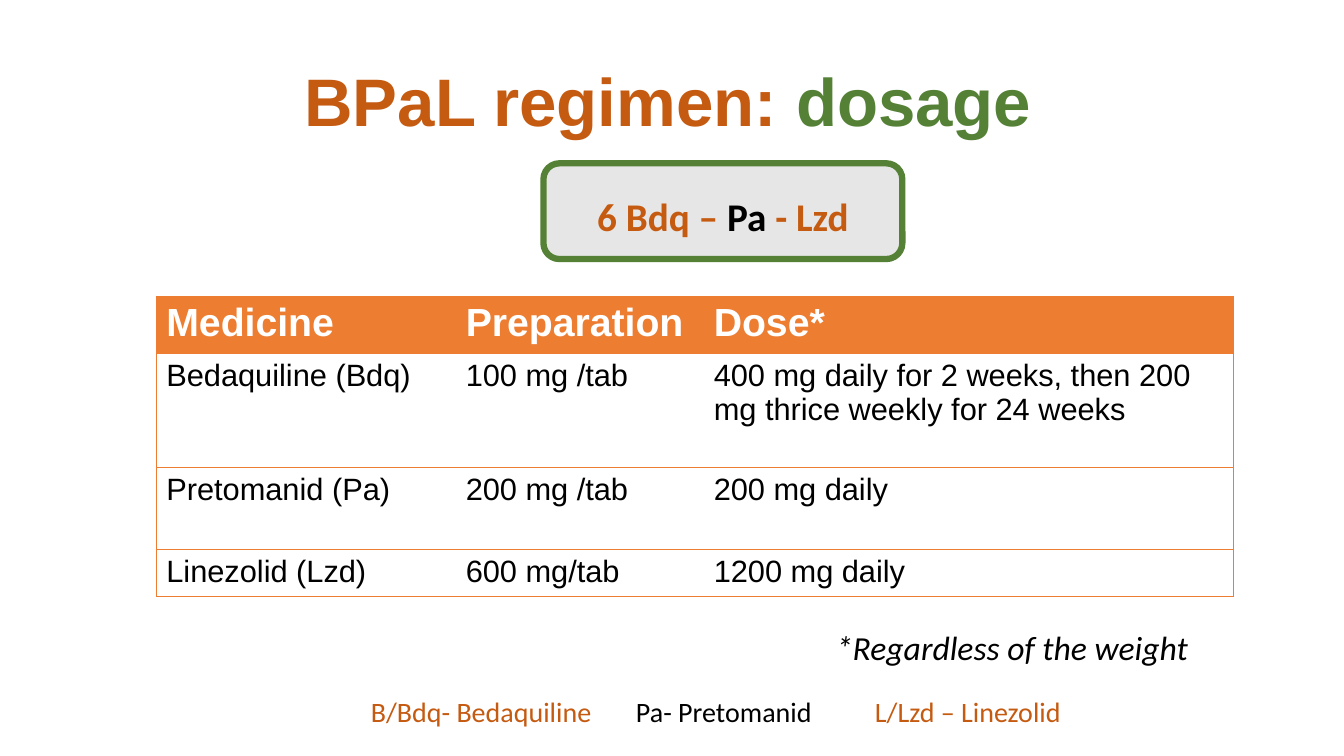
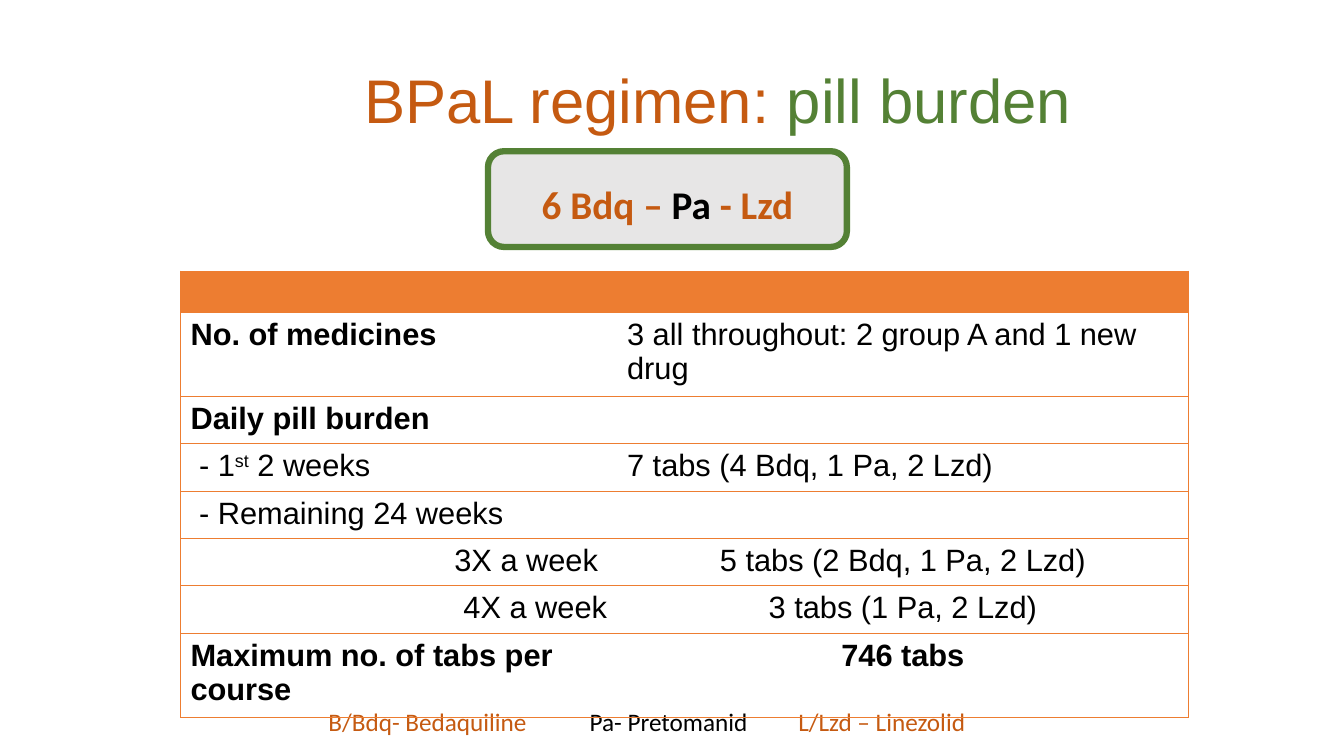
from dataclasses import dataclass

from lxml import etree
from pptx import Presentation
from pptx.dml.color import RGBColor
from pptx.enum import shapes, text
from pptx.oxml.ns import qn
from pptx.util import Inches, Pt


@dataclass(frozen=True)
class Theme:
    rust: str = "C55A11"
    green: str = "548135"
    orange: str = "ED7D31"
    grey: str = "E7E6E6"
    black: str = "000000"
    white: str = "FFFFFF"
    heading_font: str = "Arial"
    body_font: str = "Calibri"
    header_size: int = 28
    cell_size: int = 22
    pill_size: int = 28
    note_size: int = 24
    rule_width: float = 0.75
    outline_width: float = 4.5
    plain_table: str = "{2D5ABB26-0587-4C30-8999-92F81FD0307C}"


THEME = Theme()
ALIGN = text.PP_ALIGN
MIDDLE = text.MSO_ANCHOR.MIDDLE


def add_run(paragraph, words, color, superscript=False, **font_format):
    run = paragraph.add_run()
    run.text = words
    for name, value in font_format.items():
        setattr(run.font, name, value)
    run.font.color.rgb = RGBColor.from_string(color)
    if superscript:
        run.font._element.set("baseline", "30000")


def add_text_box(slide, box, runs, align=ALIGN.LEFT, **font_format):
    """Add a one-paragraph box; runs are (words, colour) pairs."""
    frame = slide.shapes.add_textbox(*map(Inches, box)).text_frame
    frame.word_wrap = True
    paragraph = frame.paragraphs[0]
    paragraph.alignment = align
    for words, color in runs:
        add_run(paragraph, words, color, **font_format)
    return frame


def add_title(slide, box, topic, size, bold):
    frame = add_text_box(
        slide, box, [("BPaL regimen:", THEME.rust), (" " + topic, THEME.green)],
        ALIGN.CENTER, name=THEME.heading_font, size=Pt(size), bold=bold)
    frame.vertical_anchor = MIDDLE
    frame.paragraphs[0].line_spacing = 0.9


def add_legend(slide, box, size, tab_stops):
    """Add the three abbreviations, the last two placed at tab stops."""
    frame = add_text_box(
        slide, box,
        [("B/Bdq- Bedaquiline\t", THEME.rust), ("Pa- Pretomanid\t", THEME.black),
         ("L/Lzd – Linezolid", THEME.rust)],
        name=THEME.body_font, size=Pt(size))
    properties = frame.paragraphs[0]._p.get_or_add_pPr()
    tab_list = etree.SubElement(properties, qn("a:tabLst"))
    for stop in tab_stops:
        etree.SubElement(tab_list, qn("a:tab"), pos=str(Inches(stop)), algn="l")


def add_regimen_pill(slide, left, top):
    shape = slide.shapes.add_shape(
        shapes.MSO_SHAPE.ROUNDED_RECTANGLE, *map(Inches, (left, top, 3.56, 0.95)))
    shape.shadow.inherit = False
    shape.fill.solid()
    shape.fill.fore_color.rgb = RGBColor.from_string(THEME.grey)
    shape.line.color.rgb = RGBColor.from_string(THEME.green)
    shape.line.width = Pt(THEME.outline_width)
    frame = shape.text_frame
    frame.vertical_anchor = MIDDLE
    frame.margin_top, frame.margin_bottom = Inches(0.1), 0
    paragraph = frame.paragraphs[0]
    paragraph.alignment = ALIGN.CENTER
    for words, color in (("6 Bdq – ", THEME.rust), ("Pa", THEME.black),
                         (" - Lzd", THEME.rust)):
        add_run(paragraph, words, color, name=THEME.body_font,
                size=Pt(THEME.pill_size), bold=True)


def add_border(cell, side):
    line = etree.SubElement(cell._tc.get_or_add_tcPr(), qn("a:ln" + side),
                            w=str(Pt(THEME.rule_width)))
    fill = etree.SubElement(line, qn("a:solidFill"))
    etree.SubElement(fill, qn("a:srgbClr"), val=THEME.orange)


def fill_cell(cell, content, is_header):
    """Write content: a string, or a dict of runs, bold, align and right margin."""
    if isinstance(content, str):
        content = {"runs": [content]}
    if is_header:
        cell.fill.solid()
        cell.fill.fore_color.rgb = RGBColor.from_string(THEME.orange)
    else:
        cell.fill.background()
    paragraph = cell.text_frame.paragraphs[0]
    paragraph.alignment = content.get("align", ALIGN.LEFT)
    cell.margin_right = Inches(content.get("right", 0.1))
    for words in filter(None, content["runs"]):
        add_run(paragraph, words, THEME.white if is_header else THEME.black,
                superscript=words == "st", name=THEME.heading_font,
                size=Pt(THEME.header_size if is_header else THEME.cell_size),
                bold=is_header or content.get("bold", False))


def add_banded_table(slide, left, top, widths, heights, rows):
    """Add a table with an outer frame and a rule above every odd row."""
    table = slide.shapes.add_table(
        len(rows), len(widths),
        *map(Inches, (left, top, sum(widths), sum(heights)))).table
    table.first_row = table.horz_banding = False
    table._tbl.tblPr.find(qn("a:tableStyleId")).text = THEME.plain_table
    for column, width in zip(table.columns, widths):
        column.width = Inches(width)
    for row, height in zip(table.rows, heights):
        row.height = Inches(height)
    for i, row in enumerate(rows):
        for j, content in enumerate(row):
            cell = table.cell(i, j)
            sides = {"L": j == 0, "R": j == len(widths) - 1,
                     "T": i == 0 or i % 2 == 1, "B": i == len(rows) - 1}
            for side, is_drawn in sides.items():
                if is_drawn:
                    add_border(cell, side)
            fill_cell(cell, content, is_header=i == 0)


def add_dosage_slide(slide):
    add_title(slide, (0.57, 0.71, 12.11, 0.66), "dosage", 48, True)
    add_banded_table(
        slide, 1.55, 2.94, (2.97, 2.46, 5.25), (0.54, 1.13, 0.81, 0.44),
        [("Medicine", "Preparation", "Dose*"),
         ("Bedaquiline (Bdq)", "100 mg /tab",
          "400 mg daily for 2 weeks, then 200 mg thrice weekly for 24 weeks"),
         ("Pretomanid (Pa)", "200 mg /tab", "200 mg daily"),
         ("Linezolid (Lzd)", "600 mg/tab", "1200 mg daily")])
    add_legend(slide, (3.58, 6.84, 7.27, 0.44), 20, (2.63, 5))
    add_text_box(slide, (8.07, 6.17, 3.81, 0.5),
                 [("*Regardless of the weight", THEME.black)], ALIGN.RIGHT,
                 name=THEME.body_font, size=Pt(THEME.note_size), italic=True)
    add_regimen_pill(slide, 5.39, 1.62)


def add_pill_burden_slide(slide):
    def bold(words, align=ALIGN.LEFT):
        return {"runs": [words], "bold": True, "align": align}

    def aligned(words, align, right=0.1):
        return {"runs": [words], "align": align, "right": right}

    add_title(slide, (0.91, 0.3, 12.42, 1.45), "pill burden", 44, False)
    add_legend(slide, (3.16, 6.96, 7, 0.4), 18, (2.59, 4.66))
    add_regimen_pill(slide, 4.84, 1.5)
    single, double = 0.47, 0.83
    add_banded_table(
        slide, 1.79, 2.69, (4.33, 5.67),
        (0.41, double, *[single] * 5, double),
        [("", ""),
         (bold("No. of medicines"), "3 all throughout: 2 group A and 1 new drug"),
         (bold("Daily pill burden"), ""),
         ({"runs": [" - 1", "st", " 2 weeks"]}, "7 tabs (4 Bdq, 1 Pa, 2 Lzd)"),
         (" - Remaining 24 weeks", ""),
         (aligned("3X a week", ALIGN.RIGHT, 0.19),
          aligned("5 tabs (2 Bdq, 1 Pa, 2 Lzd)", ALIGN.CENTER)),
         (aligned("4X a week", ALIGN.RIGHT),
          aligned("3 tabs (1 Pa, 2 Lzd)", ALIGN.CENTER)),
         (bold("Maximum no. of tabs per course"), bold("746 tabs", ALIGN.CENTER))])


def main():
    presentation = Presentation()
    presentation.slide_width = Inches(13.33)
    presentation.slide_height = Inches(7.5)
    blank = presentation.slide_layouts[6]
    for build in (add_dosage_slide, add_pill_burden_slide):
        build(presentation.slides.add_slide(blank))
    presentation.save("out.pptx")


if __name__ == "__main__":
    main()
